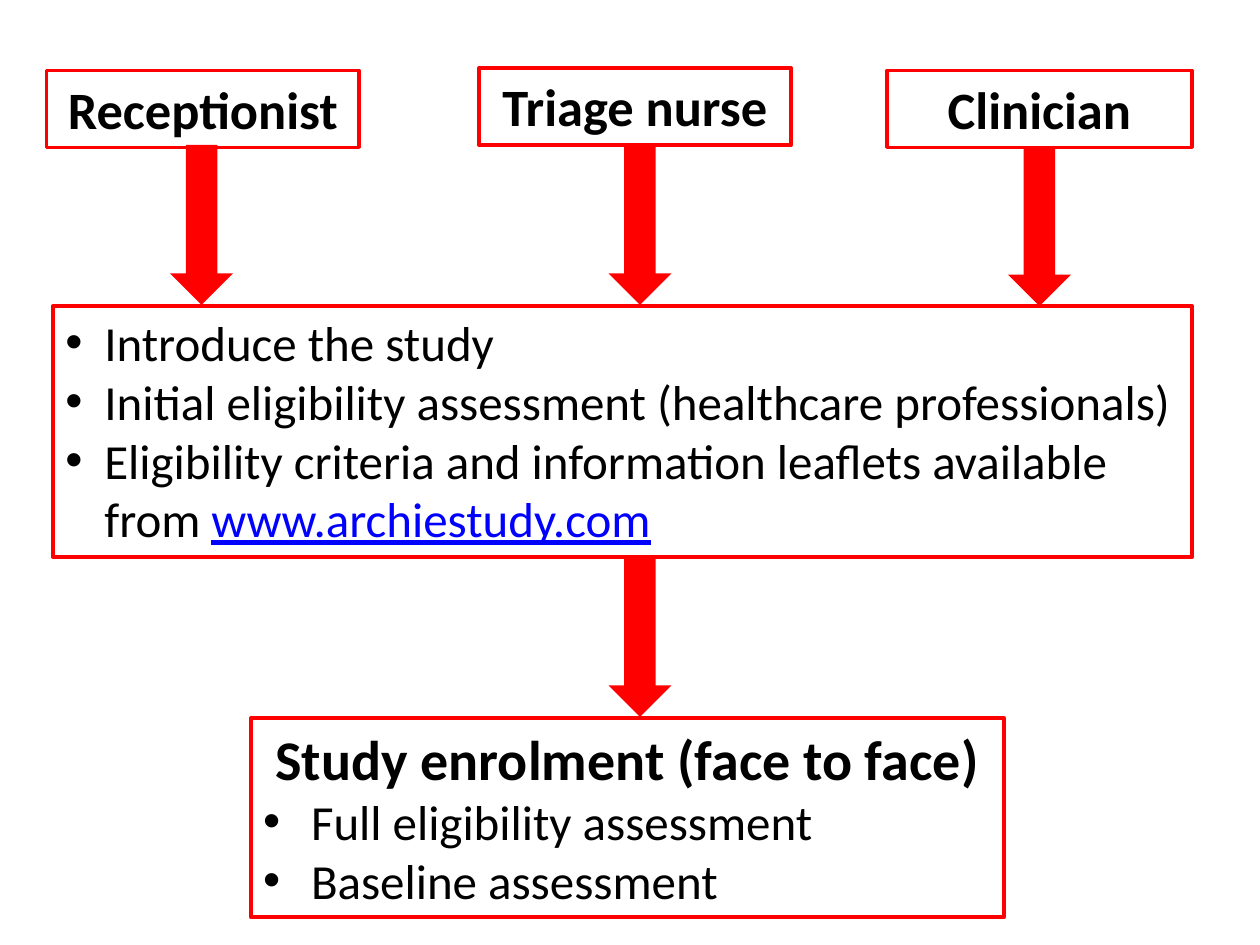
from dataclasses import dataclass

from lxml.etree import SubElement
from pptx import Presentation
from pptx.dml.color import RGBColor
from pptx.enum.shapes import MSO_SHAPE
from pptx.enum.text import PP_ALIGN
from pptx.oxml.ns import qn
from pptx.util import Inches, Pt


@dataclass(frozen=True)
class Theme:
    """Hold the colours, font and type sizes of the slide."""
    accent: RGBColor = RGBColor(0xFF, 0x00, 0x00)
    ink: RGBColor = RGBColor(0x00, 0x00, 0x00)
    web: RGBColor = RGBColor(0x00, 0x00, 0xFF)
    font: str = "Calibri"
    role: int = 30
    heading: int = 32
    body: int = 28


THEME = Theme()
ROLES = [
    ("Receptionist", 0.37, 0.56, 2.48),
    ("Triage nurse", 3.8, 0.54, 2.48),
    ("Clinician", 7.04, 0.56, 2.42),
]
ROLE_HEIGHT = 0.61
ARROWS = [(1.35, 1.15), (4.83, 1.15), (8, 1.16), (4.83, 4.42)]
ARROW_SIZE = (0.5, 1.27)
INTRODUCTION = [
    "Introduce the study",
    "Initial eligibility assessment (healthcare professionals)",
    "Eligibility criteria and information leaflets available from ",
]
WEBSITE = "www.archiestudy.com"
ENROLMENT = ["Full eligibility assessment", "Baseline assessment"]


def apply(target, values):
    """Set each named attribute on the target."""
    for name, value in values.items():
        setattr(target, name, value)


def add_words(paragraph, words, size, colour=THEME.ink, **extra):
    """Append a formatted run to a paragraph."""
    run = paragraph.add_run()
    run.text = words
    apply(run.font, {"name": THEME.font, "size": Pt(size), **extra})
    run.font.color.rgb = colour


def add_box(slide, left, top, width, height, outline=2):
    """Add a red outlined text box and return its text frame."""
    box = slide.shapes.add_textbox(*map(Inches, (left, top, width, height)))
    box.line.color.rgb = THEME.accent
    box.line.width = Pt(outline)
    box.text_frame.word_wrap = True
    return box.text_frame


def add_title(frame, words, size):
    """Write a bold centred line as the first paragraph of a frame."""
    title = frame.paragraphs[0]
    title.alignment = PP_ALIGN.CENTER
    add_words(title, words, size, bold=True)


def add_bullet(paragraph, words, indent):
    """Write a bulleted line with a hanging indent."""
    properties = paragraph._p.get_or_add_pPr()
    hang = Inches(indent)
    properties.set("marL", str(hang))
    properties.set("indent", str(-hang))
    SubElement(properties, qn("a:buFont"), typeface="Arial")
    SubElement(properties, qn("a:buChar"), char="•")
    add_words(paragraph, words, THEME.body)


def add_arrow(slide, left, top):
    """Add a solid red arrow pointing down."""
    arrow = slide.shapes.add_shape(
        MSO_SHAPE.DOWN_ARROW, *map(Inches, (left, top, *ARROW_SIZE)))
    arrow.shadow.inherit = False
    arrow.fill.solid()
    arrow.fill.fore_color.rgb = THEME.accent
    arrow.line.fill.background()


def main():
    """Build the recruitment flow slide and save it."""
    deck = Presentation()
    apply(deck, {"slide_width": Inches(10), "slide_height": Inches(7.5)})
    slide = deck.slides.add_slide(deck.slide_layouts[6])

    enrolment = add_box(slide, 1.99, 5.7, 5.98, 1.58)
    add_title(enrolment, "Study enrolment (face to face)", THEME.heading)
    for step in ENROLMENT:
        add_bullet(enrolment.add_paragraph(), step, 0.38)

    introduction = add_box(slide, 0.42, 2.43, 9.04, 1.99, outline=2.5)
    for index, step in enumerate(INTRODUCTION):
        line = introduction.add_paragraph() if index else introduction.paragraphs[0]
        add_bullet(line, step, 0.31)
    add_words(line, WEBSITE, THEME.body, THEME.web, underline=True)

    for role, left, top, width in ROLES:
        add_title(add_box(slide, left, top, width, ROLE_HEIGHT), role, THEME.role)
    for left, top in ARROWS:
        add_arrow(slide, left, top)

    deck.save("out.pptx")


if __name__ == "__main__":
    main()
